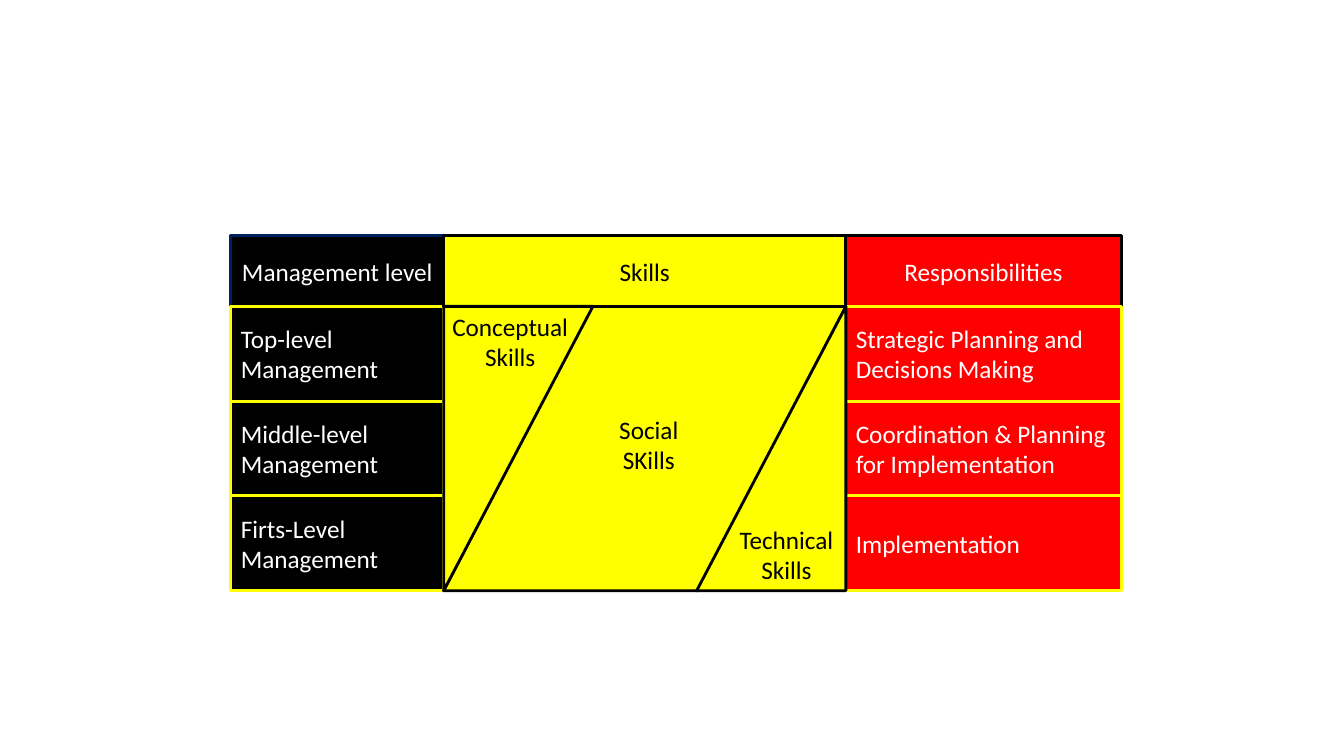
from pptx import Presentation
from pptx.dml.color import RGBColor
from pptx.enum.shapes import MSO_SHAPE as Shape
from pptx.enum.text import MSO_ANCHOR as Anchor, MSO_AUTO_SIZE as AutoSize, PP_ALIGN as Align
from pptx.util import Pt

PX = 9144  # 100 px to the inch
COLORS = {"black": "000000", "white": "FFFFFF", "yellow": "FFFF00",
          "red": "FF0000", "navy": "002060"}

LEVEL_X, LEVEL_W = 229, 211
SKILL_X, SKILL_W = 440, 399
DUTY_X, DUTY_W = 839, 273
HEADER_Y, HEADER_H = 234, 70
BODY_Y, ROW_H = HEADER_Y + HEADER_H, 94
BODY_H = 3 * ROW_H
TRIANGLE_W = 148
LABEL_H = 71


def add_outlined(shapes, kind, left, top, width, height, fill, line):
    shape = shapes.add_shape(kind, left * PX, top * PX, width * PX, height * PX)
    shape.shadow.inherit = False
    shape.fill.solid()
    shape.fill.fore_color.rgb = RGBColor.from_string(COLORS[fill])
    shape.line.color.rgb = RGBColor.from_string(COLORS[line])
    shape.line.width = Pt(2)
    return shape


def write(shape, text, color, align):
    frame = shape.text_frame
    frame.word_wrap = True
    frame.text = text
    para = frame.paragraphs[0]
    para.alignment = align
    para.font.name = "Calibri"
    para.font.size = Pt(18)
    para.font.color.rgb = RGBColor.from_string(COLORS[color])


deck = Presentation()
deck.slide_width, deck.slide_height = 1333 * PX, 750 * PX
page = deck.slides.add_slide(deck.slide_layouts[6])

# Columns: left, width, fill, header line, text colour, header, rows
columns = [
    (LEVEL_X, LEVEL_W, "black", "navy", "white", "Management level",
     ["Top-level Management", "Middle-level Management", "Firts-Level Management"]),
    (SKILL_X, SKILL_W, "yellow", "black", "black", "Skills", []),
    (DUTY_X, DUTY_W, "red", "black", "white", "Responsibilities",
     ["Strategic Planning and Decisions Making",
      "Coordination & Planning for Implementation", "Implementation"]),
]
for left, width, fill, header_line, color, header, rows in columns:
    cells = [(header, HEADER_Y, HEADER_H, header_line, Align.CENTER)]
    cells += [(text, BODY_Y + i * ROW_H, ROW_H, "yellow", Align.LEFT)
              for i, text in enumerate(rows)]
    for text, top, height, line, align in cells:
        box = add_outlined(page.shapes, Shape.RECTANGLE, left, top, width, height, fill, line)
        box.text_frame.vertical_anchor = Anchor.MIDDLE
        write(box, text, color, align)

# Skill areas: kind, left, width, rotation, flipped, label, label left, top, width
areas = [
    (Shape.PARALLELOGRAM, SKILL_X, SKILL_W, 0, False,
     "Social SKills", 581, 406, 125),
    (Shape.RIGHT_TRIANGLE, SKILL_X, TRIANGLE_W, 180, True,
     "Conceptual Skills", 432, BODY_Y, TRIANGLE_W),
    (Shape.RIGHT_TRIANGLE, DUTY_X - TRIANGLE_W, TRIANGLE_W, 0, True,
     "Technical Skills", 706, BODY_Y + BODY_H - LABEL_H, TRIANGLE_W),
]
for kind, left, width, rotation, flipped, text, label_x, label_y, label_w in areas:
    group = page.shapes.add_group_shape()
    area = add_outlined(group.shapes, kind, left, BODY_Y, width, BODY_H, "yellow", "black")
    area.rotation = rotation
    if flipped:
        area.element.spPr.xfrm.set("flipH", "1")
    else:
        area.adjustments[0] = 0.52
    label = group.shapes.add_textbox(label_x * PX, label_y * PX, label_w * PX, LABEL_H * PX)
    write(label, text, "black", Align.CENTER)
    label.text_frame.auto_size = AutoSize.SHAPE_TO_FIT_TEXT

deck.save("out.pptx")
